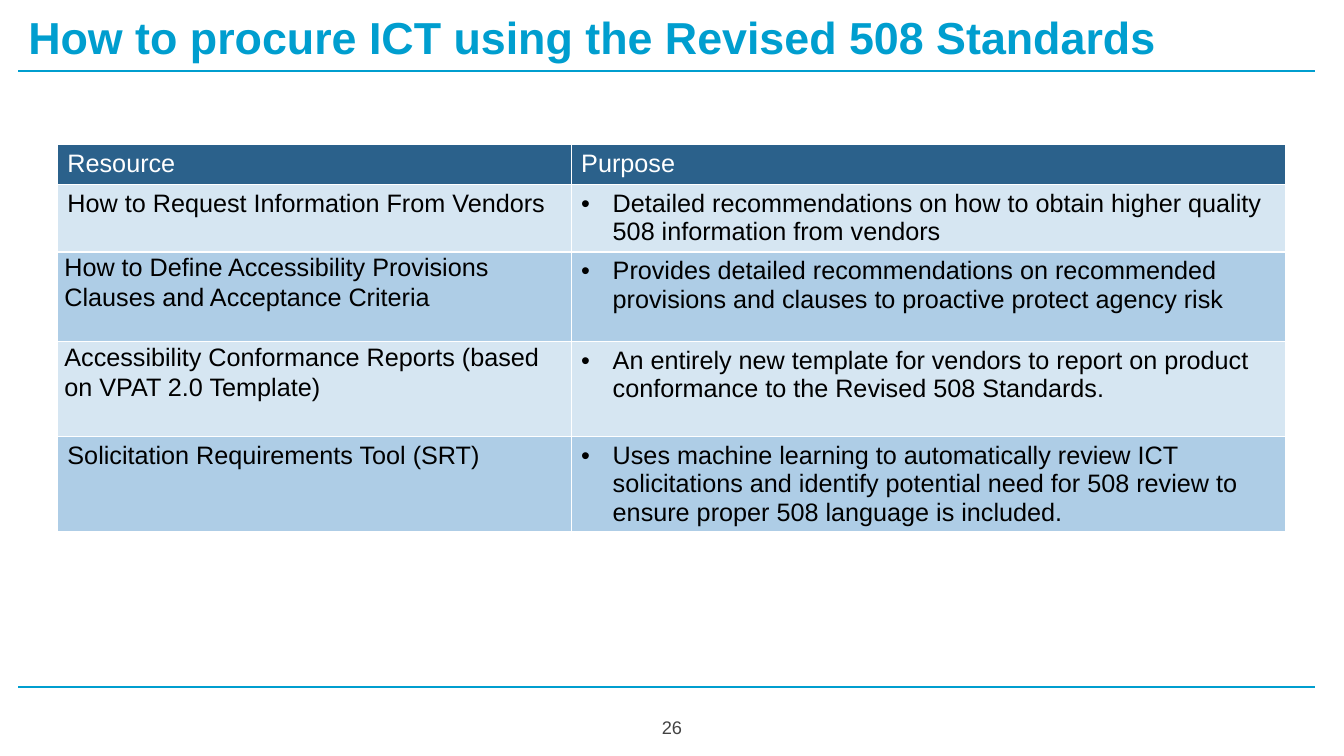
import pptx
import pptx.util
import pptx.dml.color
import pptx.enum.shapes
import pptx.enum.text
import pptx.oxml
import pptx.oxml.ns

Pt = pptx.util.Pt
ALIGN = pptx.enum.text.PP_ALIGN
ANCHOR = pptx.enum.text.MSO_ANCHOR

HUES = {
    "accent": "009ECF", "head": "2B618B", "light": "D6E6F2", "mid": "AECDE6",
    "white": "FFFFFF", "black": "000000", "grey": "434343",
}
HEADS = ("Resource", "Purpose")
# Resource, purpose, row height, whether the resource cell has tight insets
ROWS = [
    ("How to Request Information From Vendors",
     "Detailed recommendations on how to obtain higher quality 508 information from vendors",
     48, False),
    ("How to Define Accessibility Provisions Clauses and Acceptance Criteria",
     "Provides detailed recommendations on recommended provisions and clauses "
     "to proactive protect agency risk",
     64, True),
    ("Accessibility Conformance Reports (based on VPAT 2.0 Template)",
     "An entirely new template for vendors to report on product conformance "
     "to the Revised 508 Standards.",
     68, True),
    ("Solicitation Requirements Tool (SRT)",
     "Uses machine learning to automatically review ICT solicitations and identify "
     "potential need for 508 review to ensure proper 508 language is included.",
     68, False),
]


def make(tag, inner="", **attrs):
    """Build one DrawingML element."""
    pairs = "".join(f' {key}="{val}"' for key, val in attrs.items())
    space = pptx.oxml.ns.nsdecls("a")
    return pptx.oxml.parse_xml(f"<a:{tag} {space}{pairs}>{inner}</a:{tag}>")


class Deck:
    """Holds the style and the current slide."""

    font = "Arial"

    def __init__(self, wide, high):
        self.file = pptx.Presentation()
        self.file.slide_width, self.file.slide_height = Pt(wide), Pt(high)
        self.slide = self.file.slides.add_slide(self.file.slide_layouts[5])

    def hue(self, name):
        return pptx.dml.color.RGBColor.from_string(HUES[name])

    def text(self, para, words, size, hue, bold=False):
        run = para.add_run()
        run.text = words
        run.font.name, run.font.size, run.font.bold = self.font, Pt(size), bold
        run.font.color.rgb = self.hue(hue)

    def frame(self, shape, anchor):
        """Set up the text frame and return its first paragraph."""
        frame = shape.text_frame
        frame.word_wrap = True
        frame.auto_size = pptx.enum.text.MSO_AUTO_SIZE.NONE
        frame.vertical_anchor = anchor
        frame.margin_left = frame.margin_right = Pt(7.2)
        frame.margin_top = frame.margin_bottom = Pt(7.2)
        return frame.paragraphs[0]

    def title(self, words, left, top, wide, high):
        shape = self.slide.shapes.title
        shape.left, shape.top = Pt(left), Pt(top)
        shape.width, shape.height = Pt(wide), Pt(high)
        para = self.frame(shape, ANCHOR.TOP)
        para.alignment = ALIGN.LEFT
        self.text(para, words, 32, "accent", True)

    def rule(self, left, right, top):
        line = self.slide.shapes.add_connector(
            pptx.enum.shapes.MSO_CONNECTOR.STRAIGHT,
            Pt(left), Pt(top), Pt(right), Pt(top))
        line.line.color.rgb = self.hue("accent")
        line.line.width = Pt(1.5)
        line._element.spPr.append(make("effectLst"))

    def number(self, words, left, top, wide, high):
        box = self.slide.shapes.add_textbox(Pt(left), Pt(top), Pt(wide), Pt(high))
        para = self.frame(box, ANCHOR.MIDDLE)
        para.alignment = ALIGN.CENTER
        self.text(para, words, 13, "grey")

    def cell(self, cell, words, fill, hue, bullet=False, tight=False):
        props = cell._tc.get_or_add_tcPr()
        paint = f'<a:solidFill><a:srgbClr val="{HUES["white"]}"/></a:solidFill>'
        for side in "LRTB":
            props.append(make(f"ln{side}", paint, w=Pt(1)))
        cell.fill.solid()
        cell.fill.fore_color.rgb = self.hue(fill)
        para = cell.text_frame.paragraphs[0]
        if tight:
            cell.margin_left = cell.margin_right = Pt(5)
            cell.margin_top = cell.margin_bottom = 0
            para.line_spacing = 1.07
        if bullet:
            form = para._p.get_or_add_pPr()
            form.set("marL", str(Pt(22.5)))
            form.set("indent", str(-Pt(22.5)))
            form.append(make("buFont", typeface=self.font))
            form.append(make("buChar", char="•"))
        self.text(para, words, 18, hue)

    def table(self, heads, rows, left, top, cols, first):
        """Draw a table; first is the height of the header row."""
        highs = [first] + [row[2] for row in rows]
        grid = self.slide.shapes.add_table(
            len(highs), len(cols), Pt(left), Pt(top),
            Pt(sum(cols)), Pt(sum(highs))).table
        for col, wide in zip(grid.columns, cols):
            col.width = Pt(wide)
        for row, high in zip(grid.rows, highs):
            row.height = Pt(high)
        for col, words in enumerate(heads):
            self.cell(grid.cell(0, col), words, "head", "white")
        for pos, (name, goal, _, tight) in enumerate(rows, 1):
            fill = "light" if pos % 2 else "mid"
            self.cell(grid.cell(pos, 0), name, fill, "black", tight=tight)
            self.cell(grid.cell(pos, 1), goal, fill, "black", bullet=True)


def main():
    deck = Deck(960, 540)
    for top in (50.5, 491):
        deck.rule(13, 939, top)
    deck.title("How to procure ICT using the Revised 508 Standards", 13, 0, 824, 50.5)
    deck.number("26", 458.5, 499, 43, 41)
    deck.table(HEADS, ROWS, 41, 103, (367, 510.5), 29)
    deck.file.save("out.pptx")


if __name__ == "__main__":
    main()
